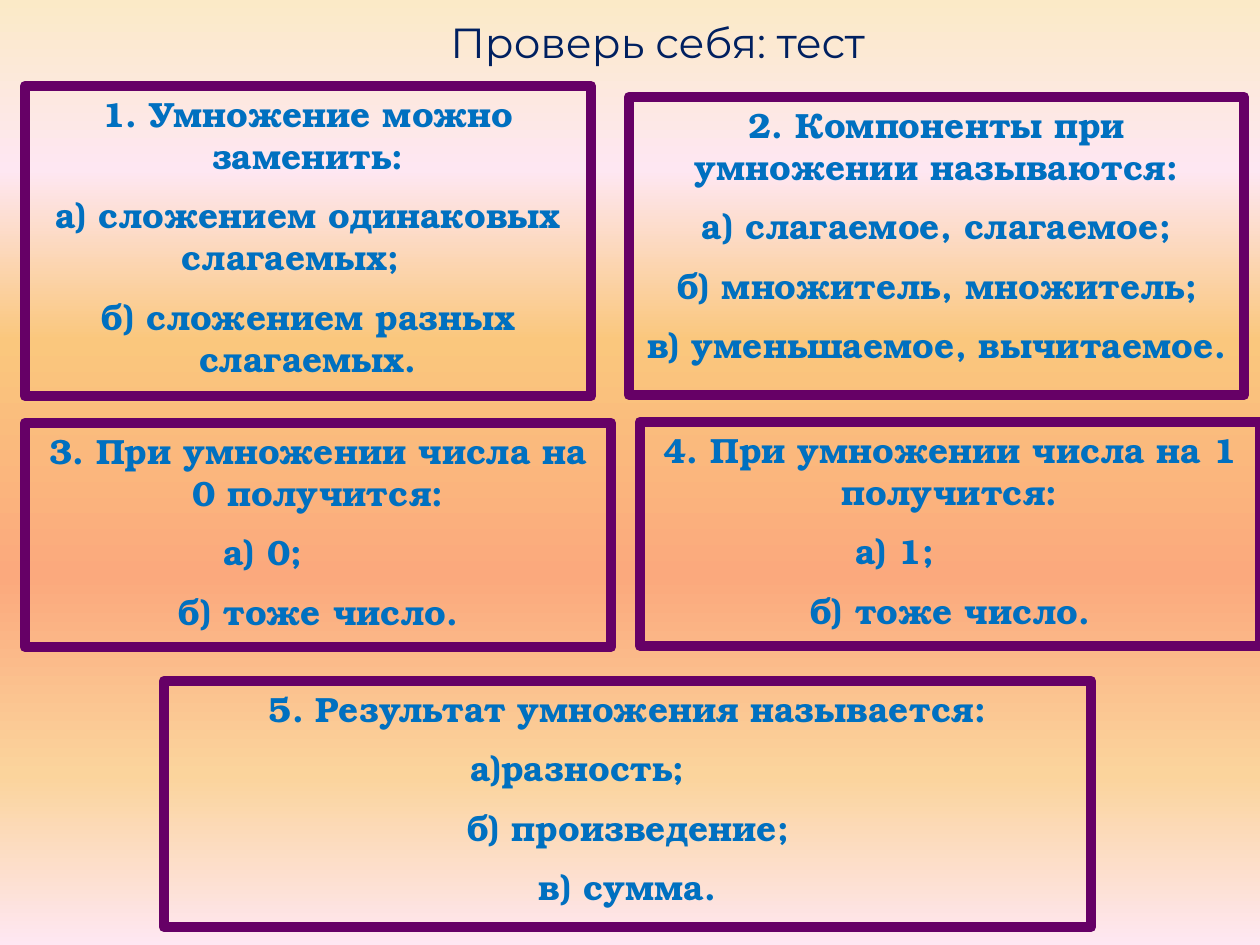
from lxml.etree import SubElement
from pptx import Presentation
from pptx.dml.color import RGBColor
from pptx.enum.shapes import MSO_SHAPE
from pptx.enum.text import MSO_ANCHOR, MSO_AUTO_SIZE, PP_ALIGN
from pptx.oxml.ns import qn
from pptx.util import Emu, Pt

PX = 914400 // 126
COLORS = {"border": "660066", "question": "0070C0", "title": "002060"}
STOPS = [(0, "FBEAC7"), (18, "FEE7F2"), (36, "FAC77D"),
         (61, "FBA97D"), (82, "FBD49C"), (100, "FEE7F2")]
QUESTIONS = [
    ((25, 86, 566, 310), ["1. Умножение можно заменить:",
                          "а) сложением одинаковых слагаемых;\t",
                          "б) сложением разных слагаемых."]),
    ((25, 423, 586, 224), ["3. При умножении числа на 0 получится:",
                           "а) 0;\t\t",
                           "б) тоже число."]),
    ((640, 422, 620, 224), ["4. При умножении числа на 1 получится:",
                            "а) 1;\t\t",
                            "б) тоже число."]),
    ((629, 97, 615, 298), ["2. Компоненты при умножении называются:",
                           "а) слагаемое, слагаемое;",
                           "б) множитель, множитель;",
                           "в) уменьшаемое, вычитаемое."]),
    ((164, 681, 927, 246), ["5. Результат умножения называется:",
                            "а)разность;\t\t",
                            "б) произведение;",
                            "в) сумма."]),
]


def box(values):
    return [Emu(v * PX) for v in values]


def style(p, font, size, color, bold):
    for r in p.runs:
        r.font.name = font
        r.font.size = Pt(size)
        r.font.bold = bold
        r.font.color.rgb = RGBColor.from_string(COLORS[color])


prs = Presentation()
prs.slide_width, prs.slide_height = box((1260, 945))
s = prs.slides.add_slide(prs.slide_layouts[6])

fill = s.background.fill
fill.gradient()
fill.gradient_angle = 270
stops = s.element.find(".//" + qn("a:gsLst"))
for gs in list(stops):
    stops.remove(gs)
for pos, color in STOPS:
    gs = SubElement(stops, qn("a:gs"), pos=str(pos * 1000))
    SubElement(gs, qn("a:srgbClr"), val=color)

for rect, lines in QUESTIONS:
    sp = s.shapes.add_shape(MSO_SHAPE.RECTANGLE, *box(rect))
    sp.shadow.inherit = False
    sp.fill.background()
    sp.line.color.rgb = RGBColor.from_string(COLORS["border"])
    sp.line.width = Pt(6)
    tf = sp.text_frame
    tf.word_wrap = True
    tf.auto_size = MSO_AUTO_SIZE.SHAPE_TO_FIT_TEXT
    tf.vertical_anchor = MSO_ANCHOR.TOP
    tf.text = "\n".join(lines)
    for i, p in enumerate(tf.paragraphs):
        p.alignment = PP_ALIGN.CENTER
        p.space_before = Pt(10 if i else 0)
        style(p, "TeX Gyre Bonum", 20, "question", True)

tf = s.shapes.add_textbox(*box((438, 10, 494, 63))).text_frame
tf.word_wrap = False
tf.auto_size = MSO_AUTO_SIZE.SHAPE_TO_FIT_TEXT
tf.text = "Проверь себя: тест"
style(tf.paragraphs[0], "Montserrat", 24, "title", False)

prs.save("out.pptx")
